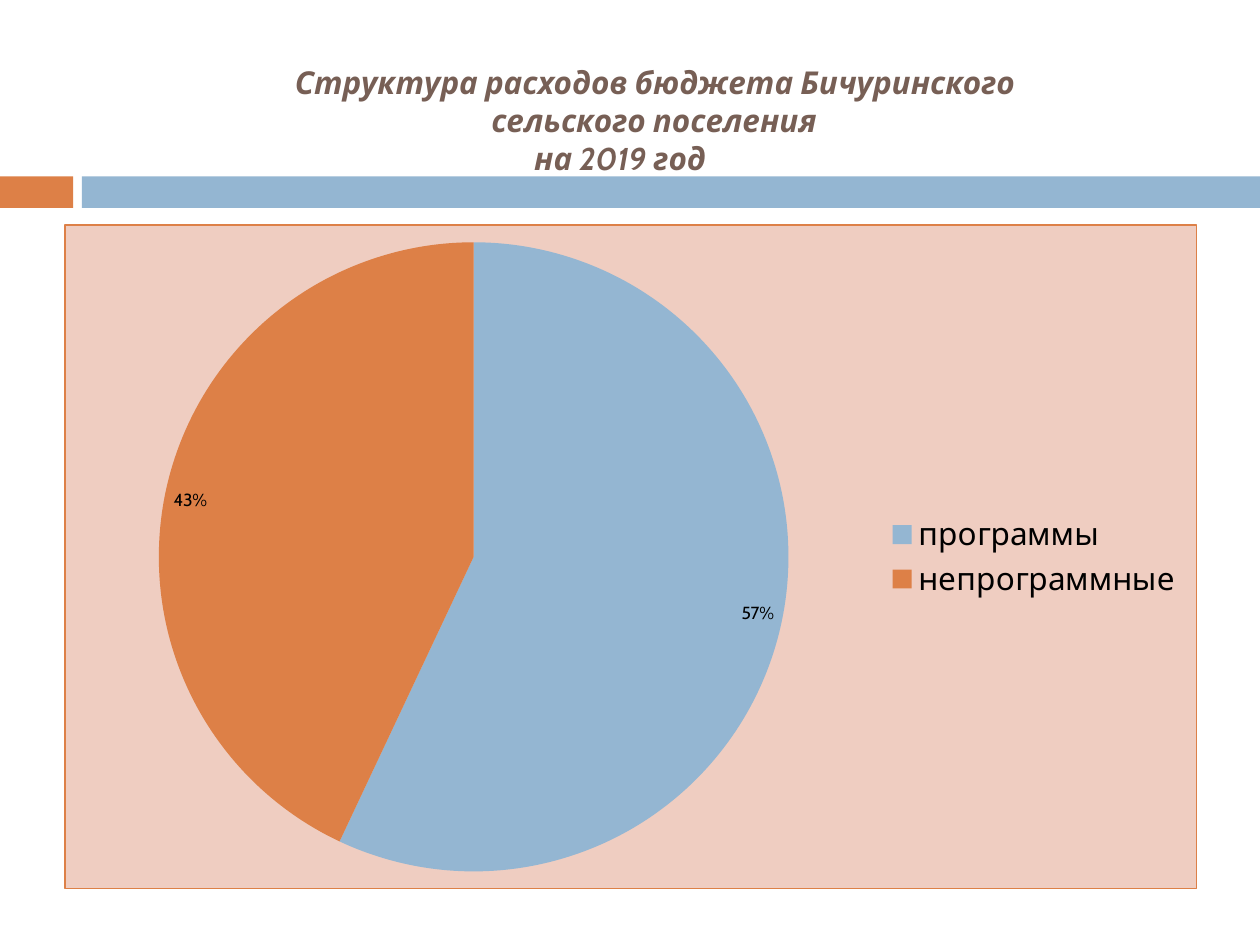
from dataclasses import dataclass

from lxml.etree import SubElement
from pptx import Presentation
from pptx.chart.data import CategoryChartData
from pptx.dml.color import RGBColor
from pptx.enum.chart import XL_CHART_TYPE, XL_LABEL_POSITION, XL_LEGEND_POSITION
from pptx.enum.shapes import MSO_SHAPE
from pptx.enum.text import MSO_ANCHOR, MSO_AUTO_SIZE, PP_ALIGN
from pptx.oxml.ns import qn
from pptx.util import Inches, Pt


@dataclass(frozen=True)
class Theme:
    """Colours, font and type sizes."""
    font: str = "Cabin"
    brown: RGBColor = RGBColor(0x77, 0x5F, 0x55)
    blue: RGBColor = RGBColor(0x94, 0xB6, 0xD2)
    orange: RGBColor = RGBColor(0xDD, 0x80, 0x47)
    pink: RGBColor = RGBColor(0xEF, 0xCD, 0xC1)
    black: RGBColor = RGBColor(0, 0, 0)
    large: Pt = Pt(18)
    small: Pt = Pt(10)
    edge: Pt = Pt(0.79)


class Deck:
    """Holds the theme and the current slide."""

    def __init__(self, theme):
        self.theme = theme
        self.show = Presentation()
        self.show.slide_width, self.show.slide_height = Inches(10), Inches(7.5)
        self.slide = self.show.slides.add_slide(self.show.slide_layouts[5])

    def bar(self, box, color):
        """Add a plain filled bar."""
        shape = self.slide.shapes.add_shape(MSO_SHAPE.RECTANGLE, *map(Inches, box))
        shape.shadow.inherit = False
        shape.fill.solid()
        shape.fill.fore_color.rgb = color
        shape.line.fill.background()

    def title(self, box, lines):
        """Place the title, each line with its own left indent."""
        head = self.slide.shapes.title
        head.left, head.top, head.width, head.height = map(Inches, box)
        frame = head.text_frame
        frame.word_wrap = True
        frame.auto_size = MSO_AUTO_SIZE.NONE
        frame.vertical_anchor = MSO_ANCHOR.MIDDLE
        frame.text = "\n".join(text for text, _ in lines)
        for para, (_, indent) in zip(frame.paragraphs, lines):
            para.alignment = PP_ALIGN.LEFT
            para._p.get_or_add_pPr().set("marL", str(Inches(indent)))
            font = para.font
            font.name, font.size = self.theme.font, self.theme.large
            font.bold = font.italic = True
            font.color.rgb = self.theme.brown

    def pie(self, box, parts):
        """Add a pie chart from (name, value, colour) parts."""
        theme = self.theme
        data = CategoryChartData(number_format="0%")
        data.categories = [name for name, _, _ in parts]
        data.add_series("Series 1", [value for _, value, _ in parts])
        chart = self.slide.shapes.add_chart(
            XL_CHART_TYPE.PIE, *map(Inches, box), data).chart
        chart.has_title = False
        chart.font.name, chart.font.size = theme.font, theme.small
        chart.font.color.rgb = theme.black
        chart.has_legend = True
        legend = chart.legend
        legend.position = XL_LEGEND_POSITION.RIGHT
        legend.include_in_layout = False
        legend.font.name, legend.font.size = theme.font, theme.large
        plot = chart.plots[0]
        plot.vary_by_categories = True
        for spot, (_, _, color) in enumerate(parts):
            fill = plot.series[0].points[spot].format.fill
            fill.solid()
            fill.fore_color.rgb = color
        plot.has_data_labels = True
        labels = plot.data_labels
        labels.show_value = True
        labels.number_format, labels.number_format_is_linked = "0%", False
        labels.position = XL_LABEL_POSITION.INSIDE_END
        self.panel(chart)

    def panel(self, chart):
        """Fill and outline the chart area."""
        root = chart._chartSpace
        area = root.makeelement(qn("c:spPr"))
        root.find(qn("c:chart")).addnext(area)
        line_fill = ((area, self.theme.pink),
                     (SubElement(area, qn("a:ln"), w=str(self.theme.edge)), self.theme.orange))
        for owner, color in line_fill:
            solid = owner.makeelement(qn("a:solidFill"))
            owner.insert(0, solid)
            SubElement(solid, qn("a:srgbClr"), val=str(color))


def main():
    """Build and save the slide."""
    theme = Theme()
    deck = Deck(theme)
    deck.bar((0, 1.4, 0.58, 0.25), theme.orange)
    deck.bar((0.65, 1.4, 9.35, 0.25), theme.blue)
    deck.title((0.83, 0.44, 8.67, 1.02), [
        ("Структура расходов бюджета Бичуринского", 1.41),
        ("сельского поселения", 2.97),
        ("на 2019 год", 3.31),
    ])
    deck.pie((0.51, 1.78, 8.99, 5.28), [
        ("программы", 0.57, theme.blue),
        ("непрограммные", 0.43, theme.orange),
    ])
    deck.show.save("out.pptx")


if __name__ == "__main__":
    main()
